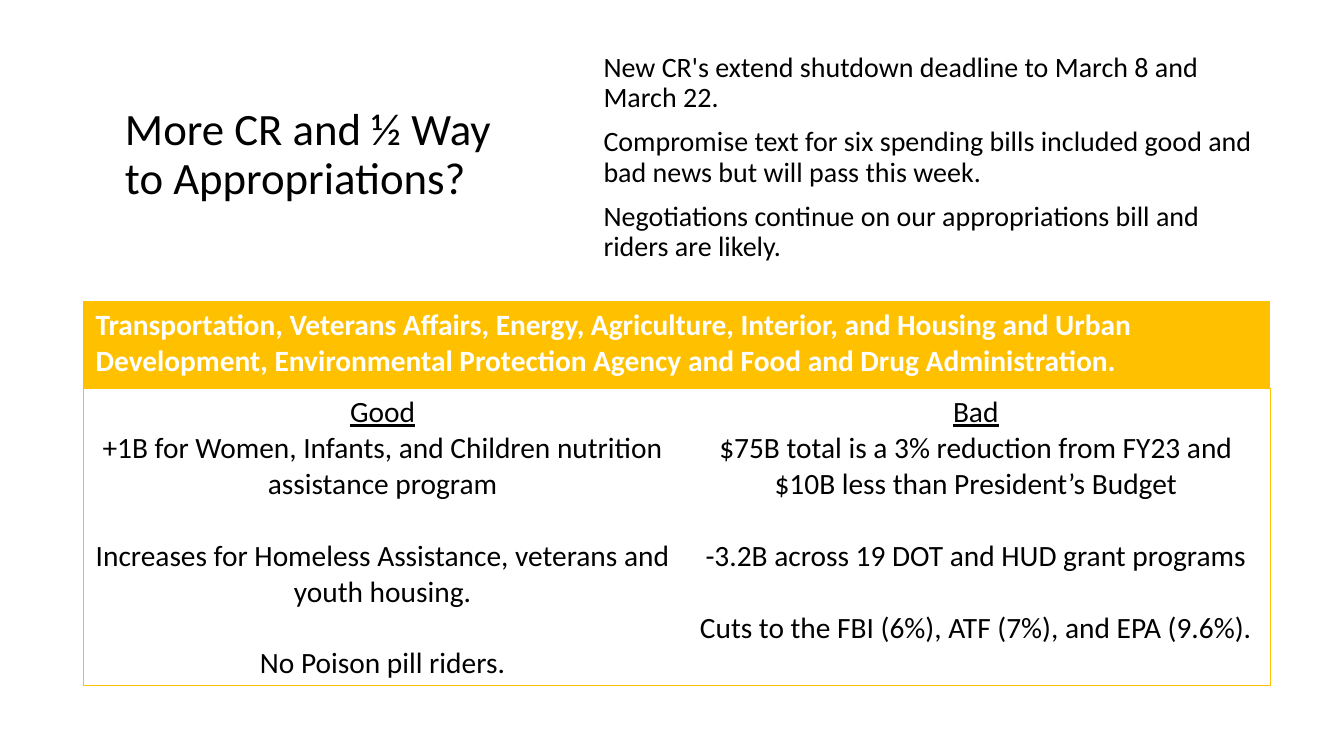
from pptx import Presentation
from pptx import util as u
from pptx.dml.color import RGBColor
from pptx.enum import text
from pptx.oxml import parse_xml
from pptx.oxml.ns import nsdecls

BLACK, WHITE, GOLD = "000000", "FFFFFF", "FFC000"


def color(hex_string):
    return RGBColor.from_string(hex_string)


def write(frame, lines, size, ink=BLACK, bold=False, align=text.PP_ALIGN.LEFT,
          line_spacing=1.0, gaps=(), underline_first=False):
    """Write one paragraph per line; gaps maps each line to its space before."""
    frame.word_wrap = True
    for i, line in enumerate(lines):
        paragraph = frame.paragraphs[0] if i == 0 else frame.add_paragraph()
        paragraph.alignment = align
        paragraph.line_spacing = line_spacing
        paragraph.space_before = u.Pt(gaps[i] if gaps else 0)
        run = paragraph.add_run()
        run.text = line
        font = run.font
        font.name, font.size, font.bold = "Calibri", u.Pt(size), bold
        font.underline = underline_first and i == 0
        font.color.rgb = color(ink)


prs = Presentation()
prs.slide_width, prs.slide_height = u.Cm(33.87), u.Cm(19.05)
slide = prs.slides.add_slide(prs.slide_layouts[6])

# Heading
heading = slide.shapes.add_textbox(u.Cm(2.9), u.Cm(1.63), u.Cm(9.88), u.Cm(4.57)).text_frame
heading.vertical_anchor = text.MSO_ANCHOR.MIDDLE
write(heading, ["More CR and ½ Way to Appropriations?"], 32, line_spacing=0.9)

# Status of the bills, lifted slightly by a deeper bottom margin
status = slide.shapes.add_textbox(u.Cm(14.96), u.Cm(2.03), u.Cm(17.32), u.Cm(4.57)).text_frame
status.vertical_anchor = text.MSO_ANCHOR.MIDDLE
status.margin_bottom = u.Cm(0.8)
write(status, [
    "New CR's extend shutdown deadline to March 8 and March 22.",
    "Compromise text for six spending bills included good and bad news but will pass this week.",
    "Negotiations continue on our appropriations bill and riders are likely.",
], 20, line_spacing=0.9, gaps=(0, 10, 10))

# Table of good and bad news
news = slide.shapes.add_table(2, 2, u.Cm(2.11), u.Cm(7.6), u.Cm(29.9), u.Cm(9.68)).table
news.horz_banding = False
news.columns[0].width, news.columns[1].width = u.Cm(15.06), u.Cm(14.84)
news.rows[0].height, news.rows[1].height = u.Cm(2.19), u.Cm(7.49)

# Cell fills, margins and the gold outline, open between the columns
for row, fill in enumerate((GOLD, WHITE)):
    for col, inner_side in enumerate(("R", "L")):
        cell = news.cell(row, col)
        cell.margin_left = cell.margin_right = u.Cm(0.3)
        cell.margin_top = cell.margin_bottom = u.Cm(0.15)
        properties = cell._tc.get_or_add_tcPr()
        for side in "LRTB":
            paint = ("<a:noFill/>" if side == inner_side else
                     f'<a:solidFill><a:srgbClr val="{GOLD}"/></a:solidFill>')
            properties.append(parse_xml(
                f'<a:ln{side} {nsdecls("a")} w="6350">{paint}</a:ln{side}>'))
        cell.fill.solid()
        cell.fill.fore_color.rgb = color(fill)

# Agencies across both columns
agencies = news.cell(0, 0)
agencies.merge(news.cell(0, 1))
write(agencies.text_frame, [
    "Transportation, Veterans Affairs, Energy, Agriculture, Interior, and Housing and Urban "
    "Development, Environmental Protection Agency and Food and Drug Administration.",
], 21, ink=WHITE, bold=True)

# Good on the left, bad on the right
columns = [
    ["Good",
     "+1B for Women, Infants, and Children nutrition assistance program",
     "Increases for Homeless Assistance, veterans and youth housing.",
     "No Poison pill riders."],
    ["Bad",
     "$75B total is a 3% reduction from FY23 and $10B less than President’s Budget",
     "-3.2B across 19 DOT and HUD grant programs",
     "Cuts to the FBI (6%), ATF (7%), and EPA (9.6%)."],
]
for col, points in enumerate(columns):
    write(news.cell(1, col).text_frame, points, 21, align=text.PP_ALIGN.CENTER,
          gaps=(0, 0, 25.6, 25.6), underline_first=True)

prs.save("out.pptx")
